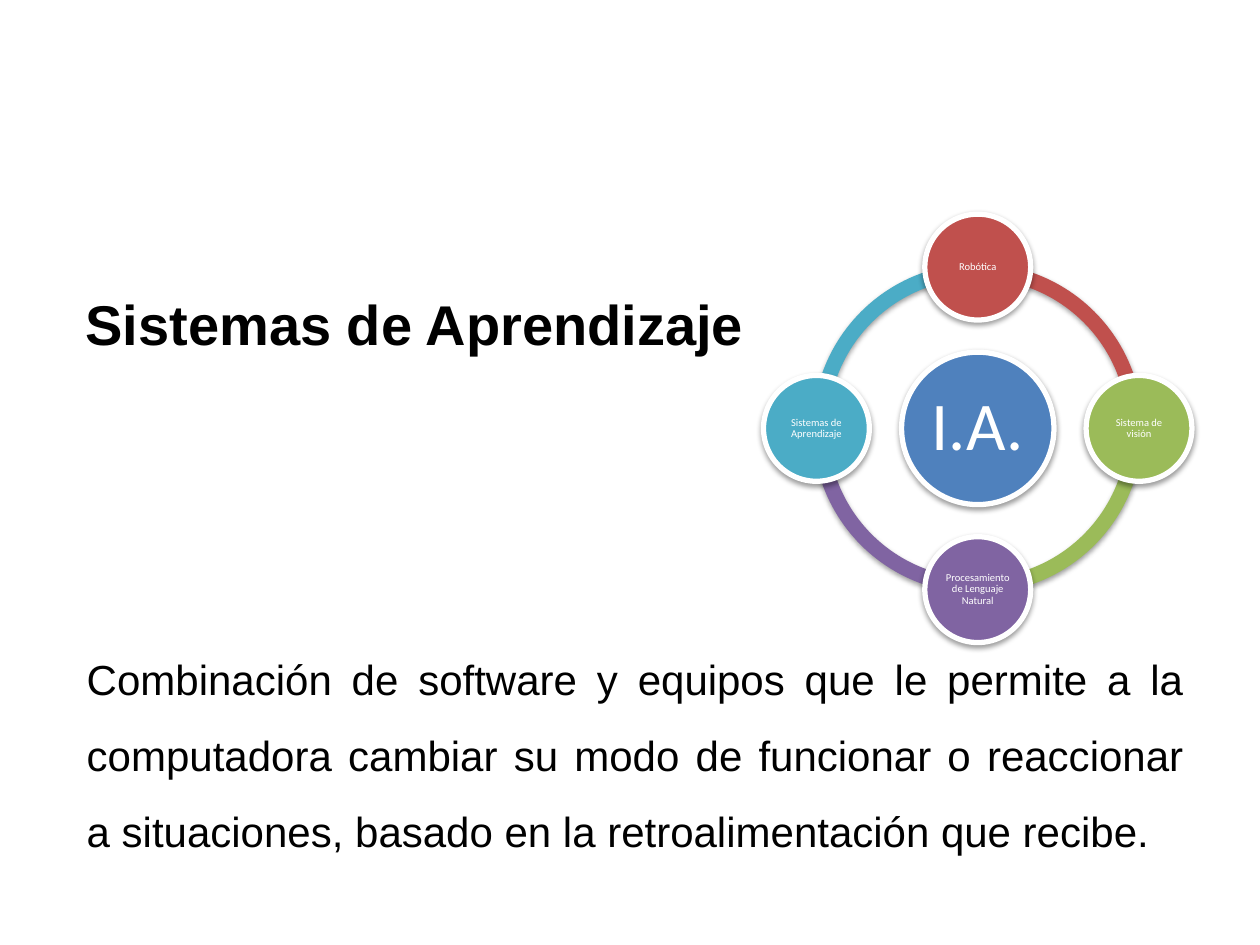
import math
from dataclasses import dataclass

from lxml import etree
from pptx import Presentation
from pptx import util as u
from pptx.dml.color import RGBColor
from pptx.enum import shapes, text
from pptx.oxml.ns import qn


@dataclass
class Theme:
    ink: str = "000000"
    paper: str = "FFFFFF"
    hub: str = "4F81BD"
    red: str = "C0504D"
    green: str = "9BBB59"
    violet: str = "8064A2"
    teal: str = "4BACC6"
    sans: str = "Arial"
    label: str = "Calibri"
    title: int = 32
    body: int = 24
    core: int = 39
    small: int = 6


def write(par, words, font, size, color, bold=False):
    run = par.add_run()
    run.text = words
    run.font.name, run.font.size, run.font.bold = font, u.Pt(size), bold
    run.font.color.rgb = RGBColor.from_string(color)


def round_shape(kind, x, y, size, color):
    """Add a filled, softly shadowed shape centred on x, y (in grid cells)."""
    item = slide.shapes.add_shape(
        kind, *(int(v * cell) for v in (x - size / 2, y - size / 2, size, size)))
    item.fill.solid()
    item.fill.fore_color.rgb = RGBColor.from_string(color)
    item.line.fill.background()
    item.shadow.inherit = False
    glow = etree.SubElement(
        item._element.spPr.find(qn("a:effectLst")), qn("a:outerShdw"),
        blurRad="40000", dist="20000", dir="5400000", rotWithShape="0")
    tone = etree.SubElement(glow, qn("a:srgbClr"), val=theme.ink)
    etree.SubElement(tone, qn("a:alpha"), val="38000")
    return item


theme = Theme()
deck = Presentation()
deck.slide_width, deck.slide_height = u.Inches(10), u.Inches(7.5)
cell = deck.slide_width / 100  # square grid: 100 columns, 75 rows
slide = deck.slides.add_slide(deck.slide_layouts[5])

# Title
title = slide.shapes.title
title.left, title.top, title.width, title.height = (
    int(v * cell) for v in (5.8, 22.5, 56.7, 6.4))
frame = title.text_frame
frame.auto_size = text.MSO_AUTO_SIZE.NONE
frame.vertical_anchor = text.MSO_ANCHOR.TOP
par = frame.paragraphs[0]
par.alignment = text.PP_ALIGN.LEFT
write(par, "Sistemas de Aprendizaje", theme.sans, theme.title, theme.ink, True)

# Definition
box = slide.shapes.add_textbox(*(int(v * cell) for v in (5.9, 49.4, 89, 18.4)))
box.text_frame.word_wrap = True
par = box.text_frame.paragraphs[0]
par.alignment = text.PP_ALIGN.JUSTIFY
par.line_spacing = 1.5
write(par, "Combinación de software y equipos que le permite a la computadora "
      "cambiar su modo de funcionar o reaccionar a situaciones, basado en la "
      "retroalimentación que recibe.", theme.sans, theme.body, theme.ink)

# Ring: one quarter arc after each field, clockwise from the top
mid_x, mid_y, reach = 77.6, 34, 12.8
fields = [
    ("Robótica", theme.red),
    ("Sistema de visión", theme.green),
    ("Procesamiento de Lenguaje Natural", theme.violet),
    ("Sistemas de Aprendizaje", theme.teal),
]
quarter = 54  # 90 degrees in adjustment units
for i, (name, color) in reversed(list(enumerate(fields))):
    arc = round_shape(shapes.MSO_SHAPE.BLOCK_ARC, mid_x, mid_y, 26.2, color)
    arc.adjustments[0] = (i + 3) % 4 * quarter
    arc.adjustments[1] = i * quarter
    arc.adjustments[2] = 0.046

# Discs: the hub, then the fields around it
discs = [("I.A.", theme.hub, mid_x, mid_y, 12.1, theme.core, 0.05)]
for i, (name, color) in enumerate(fields):
    turn = i * math.pi / 2
    discs.append((name, color, mid_x + reach * math.sin(turn),
                  mid_y - reach * math.cos(turn), 8.4, theme.small, 0.01))

for name, color, x, y, size, points, inset in discs:
    disc = round_shape(shapes.MSO_SHAPE.OVAL, x, y, size, color)
    disc.line.color.rgb = RGBColor.from_string(theme.paper)
    disc.line.width = u.Pt(3)
    frame = disc.text_frame
    frame.word_wrap = True
    frame.vertical_anchor = text.MSO_ANCHOR.MIDDLE
    frame.margin_left = frame.margin_right = u.Inches(inset)
    frame.margin_top = frame.margin_bottom = u.Inches(inset)
    par = frame.paragraphs[0]
    par.alignment = text.PP_ALIGN.CENTER
    par.line_spacing = 0.9
    write(par, name, theme.label, points, theme.paper)

deck.save("out.pptx")
